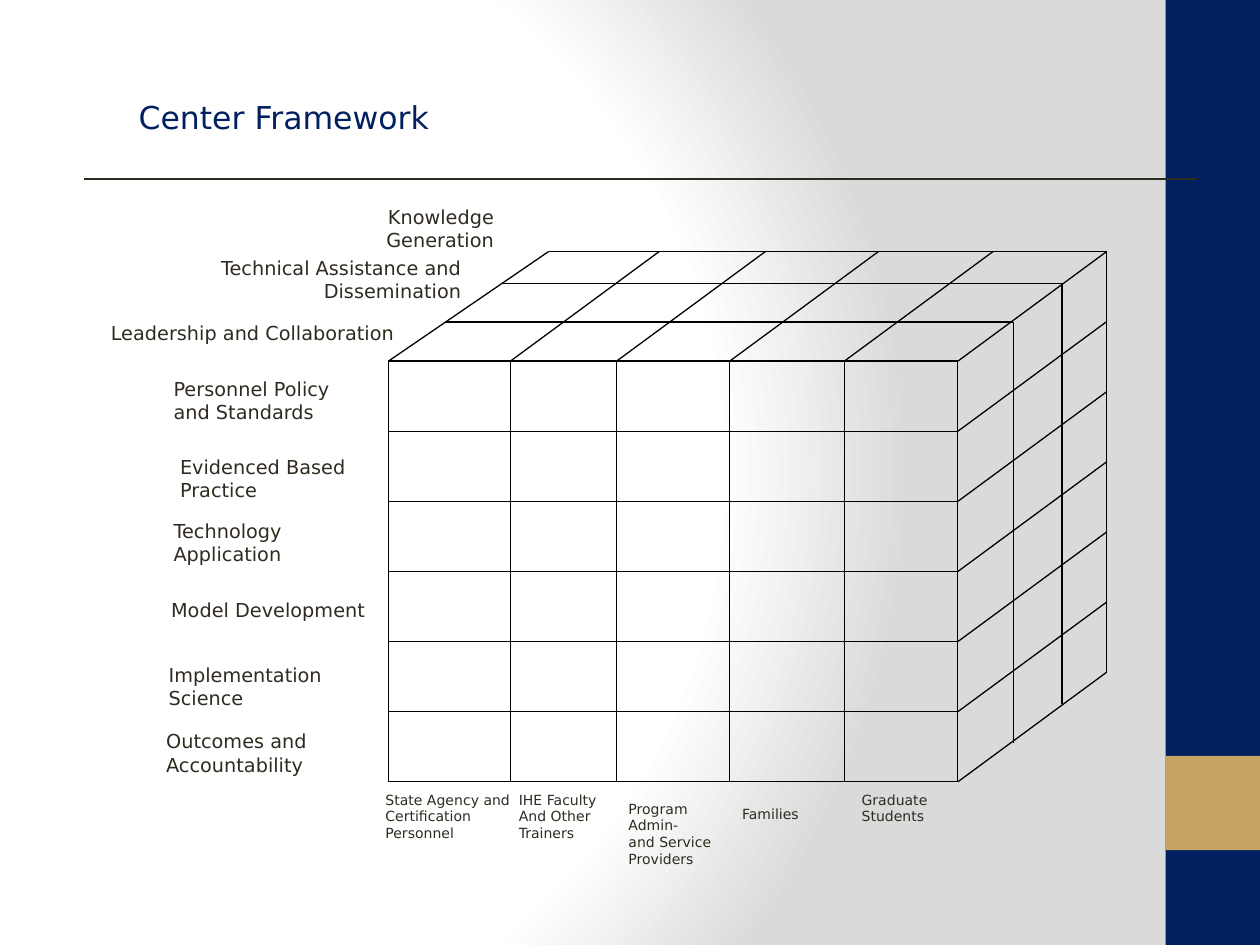
from pptx import Presentation
from pptx.dml.color import RGBColor
from pptx.enum.shapes import MSO_CONNECTOR, MSO_SHAPE
from pptx.enum.text import MSO_ANCHOR, PP_ALIGN
from pptx.oxml import parse_xml
from pptx.oxml.ns import nsdecls
from pptx.util import Cm, Pt
from lxml.etree import SubElement

COLORS = {"navy": "002060", "gold": "C8A464", "text": "2F2B20",
          "grid": "000000", "white": "FFFFFF", "grey": "DADADA"}
FONT = "DejaVu Sans"
A = "{http://schemas.openxmlformats.org/drawingml/2006/main}"

# Label: text, left, top, width, height within its region (cm), top inset
LAYERS = [
    ("Knowledge Generation", 4.17, 0, 4.34, 1.19, 0.13),
    ("Technical Assistance and Dissemination", 0.48, 1.02, 7.37, 1.19, 0.13),
    ("Leadership and Collaboration", 0, 2.34, 6.5, 0.74, 0.13),
]
ROWS = [
    ("Personnel Policy\nand Standards", 0.15, 0, 3.96, 1.19, 0.13),
    ("Evidenced Based\nPractice", 0.28, 1.57, 4.37, 1.19, 0.13),
    ("Technology\nApplication", 0.15, 2.87, 4.8, 1.19, 0.13),
    ("Model Development", 0.1, 4.47, 4.62, 0.74, 0.13),
    ("Implementation Science", 0.05, 5.77, 4.42, 1.19, 0.13),
    ("Outcomes and Accountability", 0, 7.11, 4.93, 1.19, 0.13),
]
COLUMNS = [
    ("State Agency and Certification Personnel", 0, 0.15, 3.02, 1.27, 0.13),
    ("IHE Faculty\nAnd Other\nTrainers", 2.69, 0.15, 2.29, 1.27, 0.13),
    ("Program\nAdmin-\nand Service\nProviders", 4.9, 0, 2.9, 2.39, 0.46),
    ("Families", 7.19, 0.03, 2.41, 1.02, 0.53),
    ("Graduate\nStudents", 9.6, 0.15, 3.91, 0.94, 0.13),
]


def rgb(name):
    return RGBColor.from_string(COLORS[name])


def format_text(text_frame, size, color, align=PP_ALIGN.LEFT):
    values = {"name": FONT, "size": Pt(size), "bold": False}
    for paragraph in text_frame.paragraphs:
        paragraph.alignment = align
        for run in paragraph.runs:
            for key, value in values.items():
                setattr(run.font, key, value)
            run.font.color.rgb = rgb(color)


def add_line(slide, x1, y1, x2, y2, color="grid"):
    line = slide.shapes.add_connector(
        MSO_CONNECTOR.STRAIGHT, Cm(x1), Cm(y1), Cm(x2), Cm(y2))
    line.line.color.rgb = rgb(color)
    line.line.width = Pt(0.75)
    SubElement(line._element.spPr, A + "effectLst")


def set_background(slide):
    stops = "".join(
        f'<a:gs pos="{position * 1000}"><a:srgbClr val="{COLORS[name]}"/></a:gs>'
        for position, name in ((0, "white"), (75, "white"), (100, "grey")))
    slide._element.cSld.insert(0, parse_xml(
        f'<p:bg {nsdecls("p", "a")}><p:bgPr><a:gradFill rotWithShape="1">'
        f'<a:gsLst>{stops}</a:gsLst><a:path path="circle">'
        '<a:fillToRect l="20000" t="50000" r="100000" b="50000"/></a:path>'
        '</a:gradFill><a:effectLst/></p:bgPr></p:bg>'))


def add_side_band(slide, left, top, width, height):
    # The gold square is as tall as the band is wide
    for y, h, color in ((0, height, "navy"), (15.24, width, "gold")):
        shape = slide.shapes.add_shape(
            MSO_SHAPE.RECTANGLE, Cm(left), Cm(top + y), Cm(width), Cm(h))
        shape.shadow.inherit = False
        shape.fill.solid()
        shape.fill.fore_color.rgb = rgb(color)
        shape.line.fill.background()


def add_title(slide, left, top, width, height):
    title = slide.shapes.title
    box = {"left": left, "top": top, "width": width, "height": height}
    for key, value in box.items():
        setattr(title, key, Cm(value))
    title.text_frame.text = "Center Framework"
    title.text_frame.vertical_anchor = MSO_ANCHOR.MIDDLE
    format_text(title.text_frame, 18, "navy")
    # Rule under the title
    rule_y = top + 2.85
    add_line(slide, left - 0.84, rule_y, left + width, rule_y, "text")


def add_cube(slide, left, top, width, height):
    right, bottom = left + width, top + height
    columns = [left + x for x in (0, 2.46, 4.6, 6.88, 9.19)] + [right]
    rows = [top + height * i / 6 for i in range(7)]
    # Depth steps: shift at the left edge, at the right edge, upwards
    depths = [(1.14, 1.12, 0.79), (2.31, 2.1, 1.57), (3.23, 3, 2.21)]
    back_left, back_right, rise = depths[-1]

    # Front face
    front = slide.shapes.add_shape(
        MSO_SHAPE.RECTANGLE, Cm(left), Cm(top), Cm(width), Cm(height))
    front.shadow.inherit = False
    front.fill.background()
    front.line.color.rgb = rgb("grid")
    front.line.width = Pt(0.75)
    for x in columns[1:-1]:
        add_line(slide, x, top, x, bottom)
    for y in rows[1:-1]:
        add_line(slide, left, y, right, y)

    # Edges running back over the top and the side
    for x in columns:
        shift = back_left if x == left else back_right
        add_line(slide, x, top, x + shift, top - rise)
    for y in rows[1:]:
        add_line(slide, right, y, right + back_right, y - rise)

    # Layers across the top and down the side
    for left_shift, right_shift, up in depths:
        x = right + right_shift
        add_line(slide, left + left_shift, top - up, x, top - up)
        add_line(slide, x, top - up, x, bottom - up)


def add_labels(slide, left, top, labels, size, align=PP_ALIGN.LEFT):
    for text, x, y, width, height, inset in labels:
        box = slide.shapes.add_textbox(
            Cm(left + x), Cm(top + y), Cm(width), Cm(height))
        frame = box.text_frame
        frame.word_wrap = True
        frame.margin_top = Cm(inset)
        frame.text = text
        format_text(frame, size, "text", align)


def main():
    presentation = Presentation()
    presentation.slide_width, presentation.slide_height = Cm(25.4), Cm(19.05)
    slide = presentation.slides.add_slide(presentation.slide_layouts[5])
    set_background(slide)
    add_side_band(slide, 23.5, 0, 1.9, 19.05)
    add_title(slide, 2.54, 0.76, 21.59, 3.18)
    add_cube(slide, 7.83, 7.28, 11.48, 8.48)
    add_labels(slide, 1.7, 4.01, LAYERS, 11, PP_ALIGN.RIGHT)
    add_labels(slide, 3.1, 7.47, ROWS, 11)
    add_labels(slide, 7.52, 15.67, COLUMNS, 8)
    presentation.save("out.pptx")


if __name__ == "__main__":
    main()
